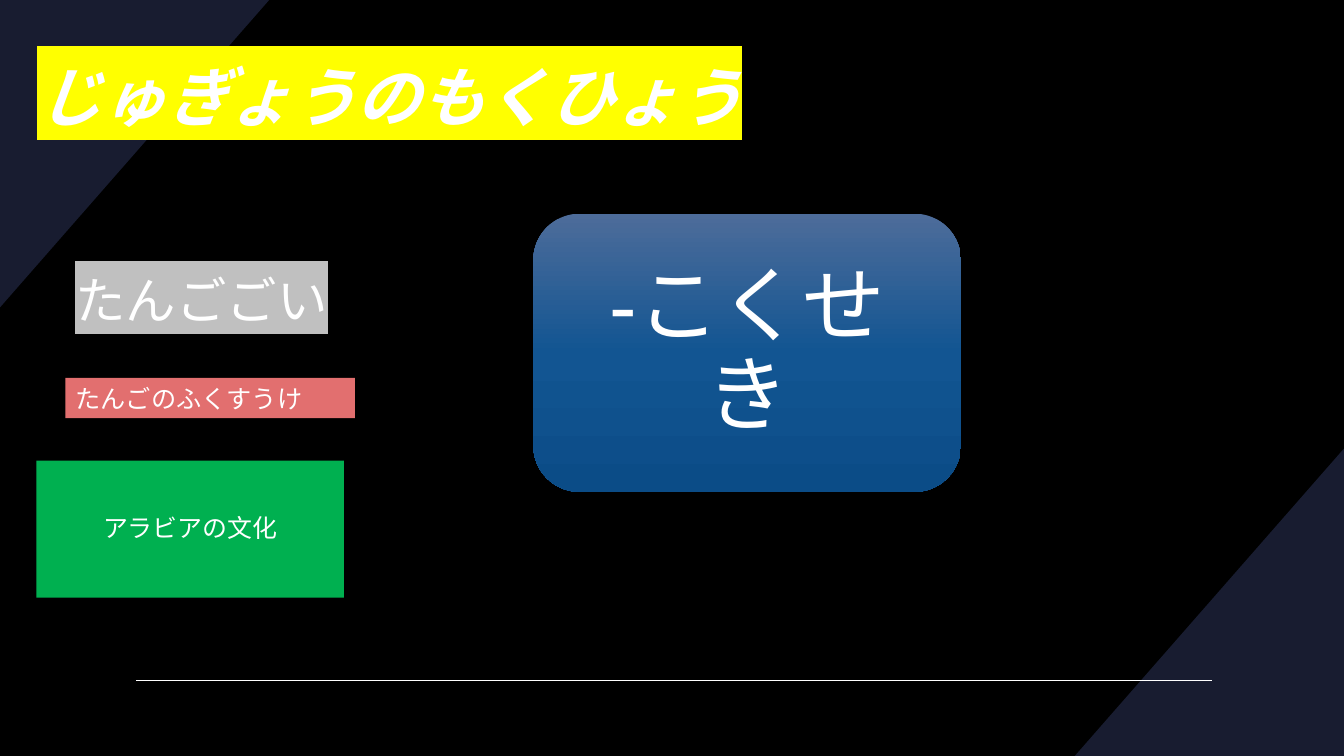
from copy import deepcopy

from lxml.etree import SubElement
from pptx import Presentation
from pptx.dml.color import RGBColor
from pptx.enum.shapes import MSO_CONNECTOR, MSO_SHAPE
from pptx.enum.text import MSO_ANCHOR, MSO_AUTO_SIZE, PP_ALIGN
from pptx.oxml.ns import qn
from pptx.util import Inches, Pt

# Content
TITLE = "じゅぎょうのもくひょう"
VOCABULARY = "たんごごい"
PLURALS = "たんごのふくすうけ"
CULTURE = "アラビアの文化"
NATIONALITY = "-こくせき"

FONT = "Arial"
COLORS = {
    "background": "000000", "corner": "181C30", "text": "FFFFFF",
    "title_mark": "FFFF00", "vocabulary_mark": "C0C0C0",
    "plurals": "E26F6F", "culture": "00B050",
}
CARD_GRADIENT = [(0, "4D6C9A"), (0.5, "125592"), (1, "0B4C87")]
WIDTH, HEIGHT = 13.33, 7.5
CORNER_WIDTH, CORNER_HEIGHT = 2.67, 3.05
CORNERS = [
    [(0, 0), (CORNER_WIDTH, 0), (0, CORNER_HEIGHT)],
    [(WIDTH, HEIGHT), (WIDTH - CORNER_WIDTH, HEIGHT), (WIDTH, HEIGHT - CORNER_HEIGHT)],
]


def rgb(name):
    return RGBColor.from_string(COLORS[name])


def write(shape, text, size, align=PP_ALIGN.LEFT, anchor=MSO_ANCHOR.TOP, inset=None,
          line_spacing=None, space_after=0, mark=None, bold=False, italic=False):
    frame = shape.text_frame
    frame.word_wrap = True
    frame.auto_size = MSO_AUTO_SIZE.NONE
    frame.vertical_anchor = anchor
    if inset is not None:
        frame.margin_left = frame.margin_right = Inches(inset)
        frame.margin_top = frame.margin_bottom = Inches(inset)
    paragraph = frame.paragraphs[0]
    paragraph.alignment = align
    paragraph.line_spacing = line_spacing
    paragraph.space_after = Pt(space_after)
    run = paragraph.add_run()
    run.text = text
    font = run.font
    font.size, font.bold, font.italic = Pt(size), bold, italic
    font.color.rgb = rgb("text")
    if mark:
        properties = font._element
        highlight = SubElement(properties, qn("a:highlight"))
        SubElement(highlight, qn("a:srgbClr"), val=COLORS[mark])
    font.name = FONT


def add_block(kind, left, top, width, height, color=None):
    shape = slide.shapes.add_shape(kind, Inches(left), Inches(top), Inches(width), Inches(height))
    shape.shadow.inherit = False
    shape.line.fill.background()
    if color:
        shape.fill.solid()
        shape.fill.fore_color.rgb = rgb(color)
    return shape


presentation = Presentation()
presentation.slide_width, presentation.slide_height = Inches(WIDTH), Inches(HEIGHT)
slide = presentation.slides.add_slide(presentation.slide_layouts[5])
slide.background.fill.solid()
slide.background.fill.fore_color.rgb = rgb("background")

# Corner triangles
for start, *others in CORNERS:
    builder = slide.shapes.build_freeform(Inches(start[0]), Inches(start[1]))
    builder.add_line_segments([(Inches(x), Inches(y)) for x, y in others], close=True)
    corner = builder.convert_to_shape()
    corner.shadow.inherit = False
    corner.fill.solid()
    corner.fill.fore_color.rgb = rgb("corner")
    corner.line.fill.background()

# Footer rule
rule = slide.shapes.add_connector(
    MSO_CONNECTOR.STRAIGHT, Inches(1.35), Inches(6.75), Inches(12.02), Inches(6.75))
rule.line.color.rgb = rgb("text")
rule.line.width = Pt(1)
SubElement(rule._element.spPr, qn("a:effectLst"))

# Title, brought in front of the corner triangles
title = slide.shapes.title
title.left, title.top = Inches(0.27), Inches(0.2)
title.width, title.height = Inches(7.28), Inches(1.59)
write(title, TITLE, 46, anchor=MSO_ANCHOR.MIDDLE, line_spacing=0.9, space_after=6,
      mark="title_mark", bold=True, italic=True)
slide.shapes._spTree.append(title._element)

# Nationality card
card = add_block(MSO_SHAPE.ROUNDED_RECTANGLE, 5.29, 2.12, 4.24, 2.76)
card.fill.gradient()
card.fill.gradient_angle = 270
stop_list = card._element.spPr.find(".//" + qn("a:gsLst"))
stop_list.append(deepcopy(stop_list[-1]))
for stop, (position, color) in zip(card.fill.gradient_stops, CARD_GRADIENT):
    stop.position = position
    stop.color.rgb = RGBColor.from_string(color)
nationality = slide.shapes.add_textbox(Inches(5.43), Inches(2.26), Inches(3.97), Inches(2.49))
write(nationality, NATIONALITY, 59, align=PP_ALIGN.CENTER, anchor=MSO_ANCHOR.MIDDLE,
      inset=0.25, line_spacing=0.9, space_after=59 * 0.35)

# Left column of topics
culture = add_block(MSO_SHAPE.RECTANGLE, 0.36, 4.57, 3.05, 1.36, "culture")
write(culture, CULTURE, 17.8, align=PP_ALIGN.CENTER, anchor=MSO_ANCHOR.MIDDLE,
      inset=0.08, line_spacing=0.9, space_after=17.8 * 0.35)
vocabulary = slide.shapes.add_textbox(Inches(0.65), Inches(2.62), Inches(3.29), Inches(0.71))
write(vocabulary, VOCABULARY, 36, mark="vocabulary_mark")
plurals = add_block(MSO_SHAPE.RECTANGLE, 0.65, 3.75, 2.87, 0.4, "plurals")
write(plurals, PLURALS, 18)

presentation.save("out.pptx")
